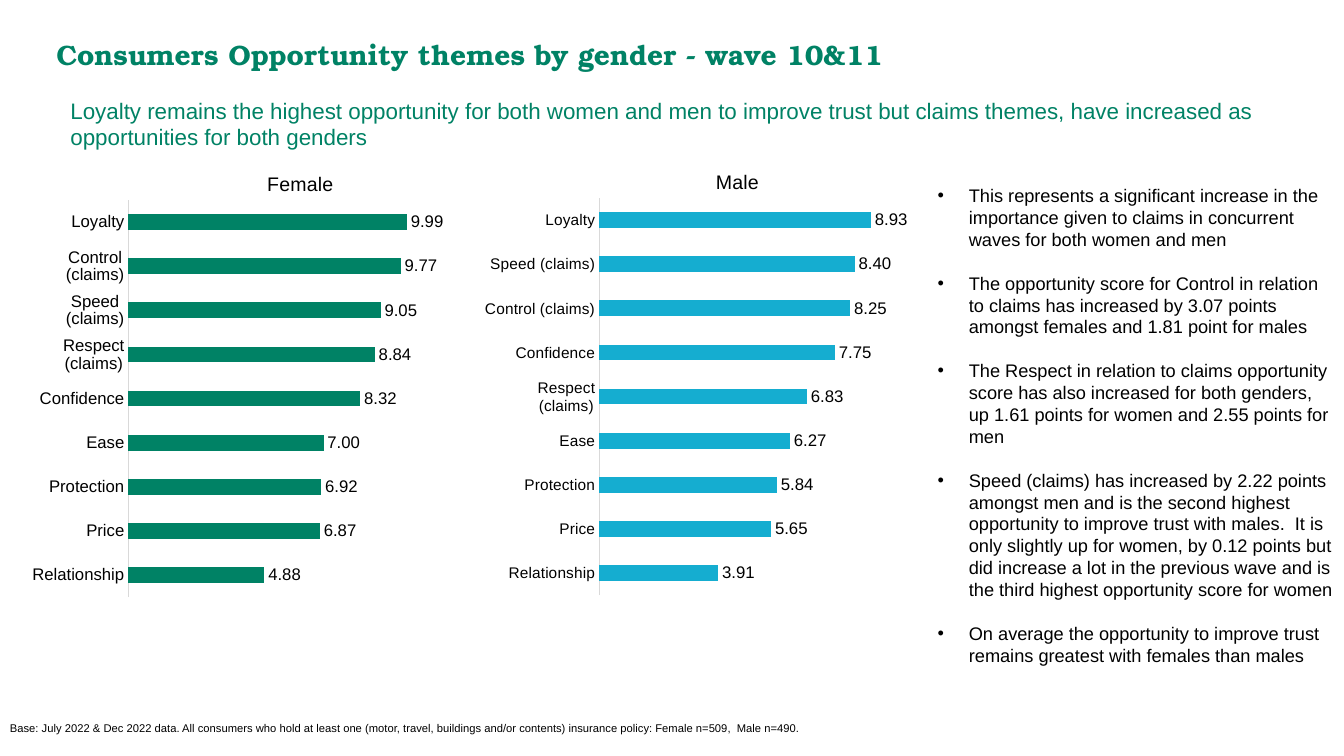
from pptx import Presentation
from pptx.chart.data import CategoryChartData
from pptx.dml.color import RGBColor
from pptx.enum.chart import XL_CHART_TYPE, XL_LABEL_POSITION, XL_TICK_MARK
from pptx.oxml import parse_xml
from pptx.oxml.ns import nsdecls, qn
from pptx.util import Inches, Pt

COLORS = {"green": "008265", "blue": "15ADD0", "black": "000000", "axis": "D9D9D9"}

FEMALE_SCORES = {
    "Loyalty": 9.99, "Control (claims)": 9.77, "Speed (claims)": 9.05,
    "Respect (claims)": 8.84, "Confidence": 8.32, "Ease": 7,
    "Protection": 6.92, "Price": 6.87, "Relationship": 4.88,
}
MALE_SCORES = {
    "Loyalty": 8.93, "Speed (claims)": 8.4, "Control (claims)": 8.25,
    "Confidence": 7.75, "Respect (claims)": 6.83, "Ease": 6.27,
    "Protection": 5.84, "Price": 5.65, "Relationship": 3.91,
}
FINDINGS = [
    "This represents a significant increase in the importance given to claims in "
    "concurrent waves for both women and men",
    "The opportunity score for Control in relation to claims has increased by 3.07 "
    "points amongst females and 1.81 point for males",
    "The Respect in relation to claims opportunity score has also increased for both "
    "genders, up 1.61 points for women and 2.55 points for men",
    "Speed (claims) has increased by 2.22 points amongst men and is the second highest "
    "opportunity to improve trust with males.  It is only slightly up for women, by 0.12 "
    "points but did increase a lot in the previous wave and is the third highest "
    "opportunity score for women",
    "On average the opportunity to improve trust remains greatest with females than males",
]


def color(name):
    return RGBColor.from_string(COLORS[name])


def format_font(font, size, color_name="black", name="Arial", bold=False):
    font.name, font.size, font.bold = name, Pt(size), bold
    font.color.rgb = color(color_name)


def write_text(paragraph, text, **font_format):
    run = paragraph.add_run()
    run.text = text
    format_font(run.font, **font_format)


def add_bullet(paragraph, indent):
    properties = paragraph._p.get_or_add_pPr()
    properties.set("marL", str(indent))
    properties.set("indent", str(-indent))
    properties.append(parse_xml(
        f'<a:buClr {nsdecls("a")}><a:srgbClr val="{COLORS["black"]}"/></a:buClr>'))
    properties.append(parse_xml(f'<a:buFont {nsdecls("a")} typeface="Arial"/>'))
    properties.append(parse_xml(f'<a:buChar {nsdecls("a")} char="•"/>'))


def manual_layout(left, top, width=None, height=None):
    """Return a chart layout element in fractions of the chart frame."""
    target = '<c:layoutTarget val="inner"/>' if width else ""
    sizes = f'<c:w val="{width}"/><c:h val="{height}"/>' if width else ""
    return parse_xml(
        f'<c:layout {nsdecls("c")}><c:manualLayout>{target}'
        '<c:xMode val="edge"/><c:yMode val="edge"/>'
        f'<c:x val="{left}"/><c:y val="{top}"/>{sizes}</c:manualLayout></c:layout>')


def remove_layout(element):
    for layout in element.findall(qn("c:layout")):
        element.remove(layout)


class SlideBuilder:
    def __init__(self, slide, label_size=12, title_size=14):
        self.slide = slide
        self.label_size = label_size
        self.title_size = title_size

    def text_frame(self, left, top, width, height):
        box = self.slide.shapes.add_textbox(
            Inches(left), Inches(top), Inches(width), Inches(height))
        box.text_frame.word_wrap = True
        return box.text_frame

    def text(self, text, *place, **font_format):
        frame = self.text_frame(*place)
        write_text(frame.paragraphs[0], text, **font_format)

    def bullets(self, texts, *place, size, gap):
        frame = self.text_frame(*place)
        frame.margin_left = frame.margin_right = frame.margin_top = frame.margin_bottom = 0
        for index, text in enumerate(texts):
            paragraph = frame.add_paragraph() if index else frame.paragraphs[0]
            add_bullet(paragraph, Inches(0.31))
            if index:
                paragraph.space_before = Pt(gap)
            write_text(paragraph, text, size=size)

    def bar_chart(self, title, scores, *place, fill, maximum, plot_left, title_left,
                  base_font="Arial", category_size=None):
        data = CategoryChartData(number_format="0.00")
        data.categories = list(scores)
        data.add_series("Series 1", list(scores.values()))
        chart = self.slide.shapes.add_chart(
            XL_CHART_TYPE.BAR_CLUSTERED, *map(Inches, place), data).chart
        format_font(chart.font, 10, name=base_font)
        chart.has_legend = False

        chart.has_title = True
        write_text(chart.chart_title.text_frame.paragraphs[0], title, size=self.title_size)
        title_element = chart.chart_title._element
        remove_layout(title_element)
        title_element.find(qn("c:tx")).addnext(manual_layout(title_left, 0.065))
        plot_area = chart._chartSpace.chart.plotArea
        remove_layout(plot_area)
        plot_area.insert(0, manual_layout(plot_left, 0.135, 0.7, 0.865))

        axis = chart.category_axis
        axis.reverse_order = True
        axis.major_tick_mark = axis.minor_tick_mark = XL_TICK_MARK.NONE
        axis.has_major_gridlines = False
        format_font(axis.tick_labels.font, category_size or self.label_size)
        axis.format.line.color.rgb = color("axis")
        axis.format.line.width = Pt(0.75)

        values = chart.value_axis
        values.minimum_scale, values.maximum_scale = 0, maximum
        values.has_major_gridlines = False
        values.visible = False

        plot = chart.plots[0]
        plot.gap_width = 182
        plot.vary_by_categories = False
        bars = plot.series[0]
        bars.format.fill.solid()
        bars.format.fill.fore_color.rgb = color(fill)
        labels = bars.data_labels
        labels.show_value = True
        labels.position = XL_LABEL_POSITION.OUTSIDE_END
        labels.number_format = "0.00"
        labels.number_format_is_linked = False
        format_font(labels.font, self.label_size)


def main():
    presentation = Presentation()
    presentation.slide_width, presentation.slide_height = Inches(13.33), Inches(7.5)
    builder = SlideBuilder(presentation.slides.add_slide(presentation.slide_layouts[6]))

    builder.bullets(FINDINGS, 9.3, 1.83, 3.94, 4.76, size=13, gap=15.7)
    builder.text("Consumers Opportunity themes by gender - wave 10&11",
                 0.46, 0.32, 12.28, 0.44,
                 size=20, color_name="green", name="TeX Gyre Bonum", bold=True)
    builder.bar_chart("Female", FEMALE_SCORES, 0.32, 1.37, 4.76, 4.56,
                      fill="green", maximum=12, plot_left=0.197, title_left=0.48)
    builder.bar_chart("Male", MALE_SCORES, 4.78, 1.35, 4.31, 4.56,
                      fill="blue", maximum=10, plot_left=0.27, title_left=0.53,
                      base_font="Calibri", category_size=11)
    builder.text("Base: July 2022 & Dec 2022 data. All consumers who hold at least one "
                 "(motor, travel, buildings and/or contents) insurance policy: "
                 "Female n=509,  Male n=490.",
                 0, 7.11, 11.16, 0.39, size=8)
    builder.text("Loyalty remains the highest opportunity for both women and men to improve "
                 "trust but claims themes, have increased as opportunities for both genders",
                 0.6, 0.91, 12.64, 0.64, size=16, color_name="green")
    presentation.save("out.pptx")


if __name__ == "__main__":
    main()
